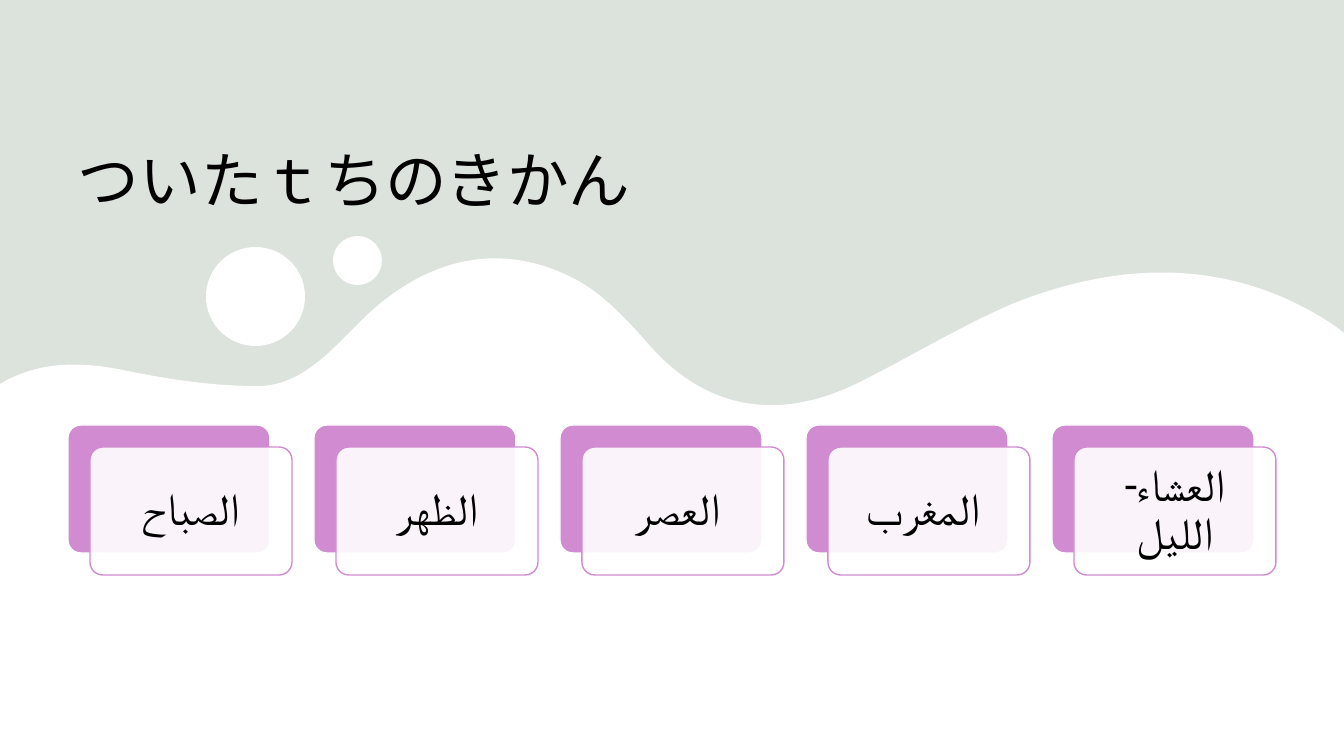
"""Build a slide of five labelled time-of-day cards under a wavy header."""
from lxml import etree
from pptx import Presentation
from pptx import util as u
from pptx.dml.color import RGBColor
from pptx.enum import shapes, text
from pptx.oxml import ns

PX = 914400 / 100.8
WIDTH, HEIGHT = 1344, 756
COLORS = {"sage": "E2E8E2", "grey": "AEAEAE", "white": "FFFFFF",
          "orchid": "D18BD1", "black": "000000"}

WAVE = [
    [(WIDTH, HEIGHT)],
    [(0, HEIGHT)],
    [(0, 384)],
    [(7, 380)],
    [(44, 361), (83, 362), (123, 370)],
    [(166, 379), (212, 386), (256, 386)],
    [(297, 387), (326, 356), (353, 329)],
    [(419, 259), (496, 239), (573, 278)],
    [(603, 293), (628, 321), (651, 347)],
    [(713, 416), (788, 418), (860, 382)],
    [(910, 357), (961, 326), (1012, 304)],
    [(1126, 258), (1237, 260), (1335, 326)],
    [(WIDTH, 333)],
]
BUBBLES = [(206, 247, 99), (333, 236, 49)]
PERIODS = ["الصباح", "الظهر", "العصر ", "المغرب ", "العشاء-الليل"]

CARD_LEFT, CARD_TOP, CARD_PITCH = 68, 425, 246
CARD_WIDTH, CARD_HEIGHT = 202, 128
FRONT_SHIFT, LABEL_PAD = 22, 4


def emu(px):
    return u.Emu(round(px * PX))


def rgb(name):
    return RGBColor.from_string(COLORS[name])


def write(shape, words, font="Roboto", size=32, color="black",
          align=text.PP_ALIGN.CENTER, anchor=text.MSO_ANCHOR.MIDDLE,
          spacing=0.9):
    frame = shape.text_frame
    frame.word_wrap = True
    frame.vertical_anchor = anchor
    paragraph = frame.paragraphs[0]
    paragraph.alignment = align
    paragraph.line_spacing = spacing
    run = paragraph.add_run()
    run.text = words
    run.font.name = font
    run.font.size = u.Pt(size)
    run.font.color.rgb = rgb(color)
    for properties in shape.element.iter(ns.qn("a:rPr")):
        etree.SubElement(properties, ns.qn("a:cs")).set("typeface", font)


def bubble(left, top, diameter):
    radius = diameter / 2
    x, y, pull = left + radius, top + radius, radius * 0.5523
    right, bottom = left + diameter, top + diameter
    return [
        [(x, top)],
        [(x + pull, top), (right, y - pull), (right, y)],
        [(right, y + pull), (x + pull, bottom), (x, bottom)],
        [(x - pull, bottom), (left, y + pull), (left, y)],
        [(left, y - pull), (x - pull, top), (x, top)],
    ]


class Canvas:
    """Hold the slide and its style, with one method per kind of element."""

    def __init__(self, slide):
        self.slide = slide
        self.line_width = u.Pt(1)

    def backdrop(self, color):
        fill = self.slide.background.fill
        fill.solid()
        fill.fore_color.rgb = rgb(color)

    def paint(self, shape, fill, line=None, opacity=100):
        shape.shadow.inherit = False
        shape.fill.solid()
        shape.fill.fore_color.rgb = rgb(fill)
        if opacity < 100:
            tint = shape.element.spPr.find(ns.qn("a:solidFill"))[0]
            alpha = etree.SubElement(tint, ns.qn("a:alpha"))
            alpha.set("val", str(opacity * 1000))
        if line:
            shape.line.color.rgb = rgb(line)
            shape.line.width = self.line_width
        else:
            shape.line.fill.background()

    def box(self, left, top, width, height, fill, line=None, opacity=100,
            corner=0):
        kind = (shapes.MSO_SHAPE.ROUNDED_RECTANGLE if corner
                else shapes.MSO_SHAPE.RECTANGLE)
        shape = self.slide.shapes.add_shape(
            kind, *map(emu, (left, top, width, height)))
        if corner:
            shape.adjustments[0] = corner
        self.paint(shape, fill, line, opacity)

    def outline(self, contours, fill):
        scaled = [[[(emu(x), emu(y)) for x, y in segment]
                   for segment in contour] for contour in contours]
        builder = self.slide.shapes.build_freeform(*scaled[0][0][0])
        for index, (start, *rest) in enumerate(scaled):
            if index:
                builder.move_to(*start[0])
            builder.add_line_segments([s[-1] for s in rest], close=True)
        shape = builder.convert_to_shape()
        edges = list(shape.element.iter(ns.qn("a:lnTo")))
        segments = [s for contour in scaled for s in contour[1:]]
        for edge, segment in zip(edges, segments):
            if len(segment) == 3:
                self.bend(edge, segment, shape.left, shape.top)
        self.paint(shape, fill)

    def bend(self, edge, segment, left, top):
        curve = etree.Element(ns.qn("a:cubicBezTo"))
        for x, y in segment:
            point = etree.SubElement(curve, ns.qn("a:pt"))
            point.set("x", str(x - left))
            point.set("y", str(y - top))
        edge.getparent().replace(edge, curve)

    def label(self, left, top, width, height, words, inset=None, **style):
        shape = self.slide.shapes.add_textbox(
            *map(emu, (left, top, width, height)))
        frame = shape.text_frame
        if inset is not None:
            frame.margin_left = frame.margin_right = emu(inset)
            frame.margin_top = frame.margin_bottom = emu(inset)
        write(shape, words, **style)

    def card(self, left, top, words):
        self.box(left, top, CARD_WIDTH, CARD_HEIGHT, "orchid", "white",
                 corner=0.1)
        left, top = left + FRONT_SHIFT, top + FRONT_SHIFT
        self.box(left, top, CARD_WIDTH, CARD_HEIGHT, "white", "orchid",
                 opacity=90, corner=0.1)
        self.label(left + LABEL_PAD, top + LABEL_PAD,
                   CARD_WIDTH - 2 * LABEL_PAD, CARD_HEIGHT - 2 * LABEL_PAD,
                   words, inset=13)


def main():
    deck = Presentation()
    deck.slide_width, deck.slide_height = emu(WIDTH), emu(HEIGHT)
    canvas = Canvas(deck.slides.add_slide(deck.slide_layouts[6]))

    canvas.backdrop("sage")
    canvas.box(0, 0, WIDTH, HEIGHT, "sage")
    canvas.box(0, 0, WIDTH, HEIGHT, "grey", opacity=10)
    canvas.outline([WAVE, *(bubble(*place) for place in BUBBLES)], "white")

    canvas.label(68, 62, 1210, 160, "ついたｔちのきかん", font="Lato", size=44,
                 align=text.PP_ALIGN.LEFT, anchor=text.MSO_ANCHOR.BOTTOM)
    for index, period in enumerate(PERIODS):
        canvas.card(CARD_LEFT + index * CARD_PITCH, CARD_TOP, period)

    deck.save("out.pptx")


if __name__ == "__main__":
    main()
